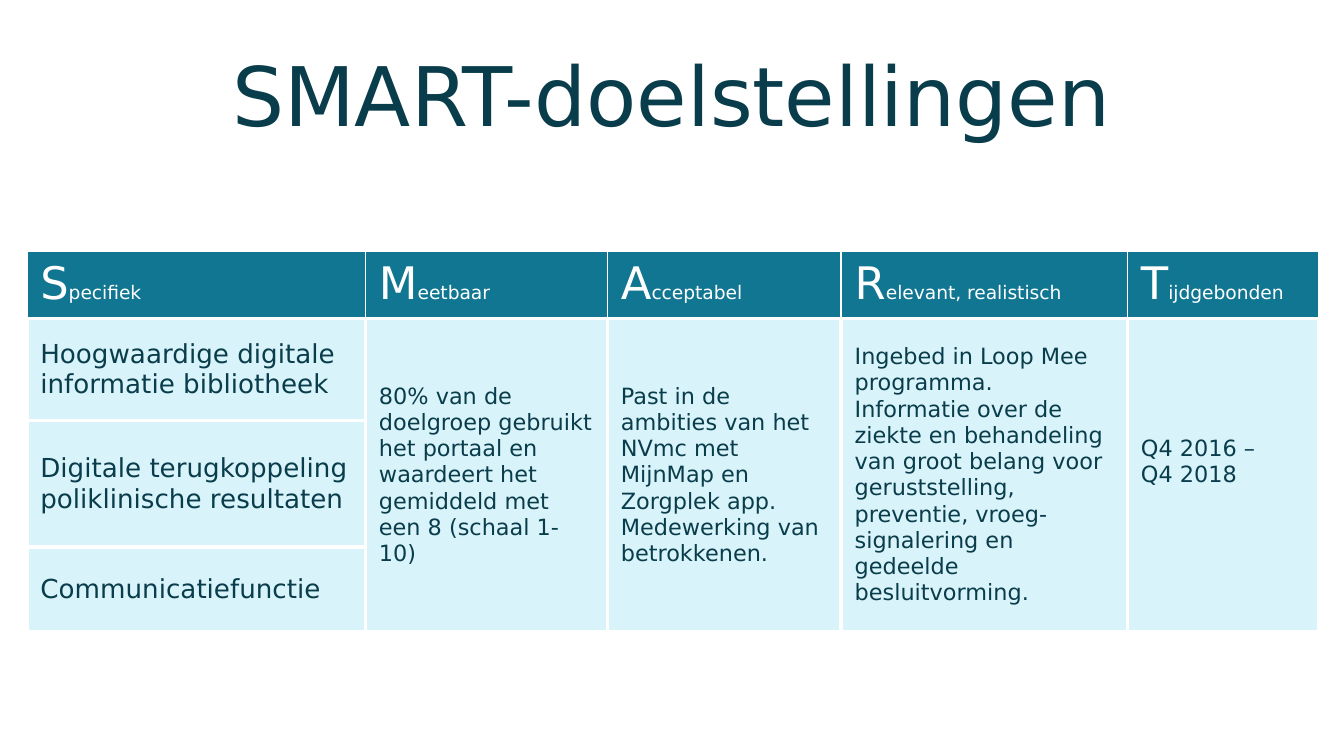
from lxml.etree import SubElement
from pptx import Presentation
from pptx.dml.color import RGBColor
from pptx.enum.text import MSO_ANCHOR as Anchor, PP_ALIGN as Align
from pptx.oxml.ns import qn
from pptx.util import Inches, Pt

# Content
TITLE = "SMART-doelstellingen"
HEADINGS = ["Specifiek", "Meetbaar", "Acceptabel", "Relevant, realistisch", "Tijdgebonden"]
GOALS = [
    "Hoogwaardige digitale informatie bibliotheek",
    "Digitale terugkoppeling poliklinische resultaten",
    "Communicatiefunctie",
]
# One list of paragraphs for each column that runs alongside all goals
SHARED = [
    ["80% van de doelgroep gebruikt het portaal en waardeert het gemiddeld met een 8 (schaal 1-10)"],
    ["Past in de ambities van het NVmc met MijnMap en Zorgplek app.",
     "Medewerking van betrokkenen."],
    ["Ingebed in Loop Mee programma.",
     "Informatie over de ziekte en behandeling van groot belang voor geruststelling, "
     "preventie, vroeg-signalering en gedeelde besluitvorming."],
    ["Q4 2016 – \nQ4 2018"],
]

# Format
FONT = "DejaVu Sans"
DARK, TEAL, PALE, WHITE = "093D4B", "117691", "D9F3FA", "FFFFFF"
THIN, THICK = 1, 2.25
COLUMNS = [2.52, 1.8, 1.74, 2.13, 1.42]
ROWS = [0.5, 0.76, 0.94, 0.63]


def rgb(value):
    return RGBColor.from_string(value)


def add_span(para, text, size, color):
    for number, line in enumerate(text.split("\n")):
        if number:
            para.add_line_break()
        span = para.add_run()
        span.text = line
        for name, value in {"name": FONT, "size": Pt(size), "bold": False}.items():
            setattr(span.font, name, value)
        span.font.color.rgb = rgb(color)


def write_cell(cell, paragraphs, size):
    cell.vertical_anchor = Anchor.MIDDLE
    frame = cell.text_frame
    for number, text in enumerate(paragraphs):
        para = frame.add_paragraph() if number else frame.paragraphs[0]
        add_span(para, text, size, DARK)


def style_cell(cell, fill, widths):
    props = cell._tc.get_or_add_tcPr()
    for side, width in widths.items():
        line = SubElement(props, qn(f"a:ln{side}"), w=str(Pt(width)))
        SubElement(SubElement(line, qn("a:solidFill")), qn("a:srgbClr"), val=WHITE)
    cell.fill.solid()
    cell.fill.fore_color.rgb = rgb(fill)


# Widescreen page, 16:9
deck = Presentation()
deck.slide_width, deck.slide_height = Inches(10), Inches(10 * 9 / 16)
page = deck.slides.add_slide(deck.slide_layouts[5])

# Title
title = page.shapes.title
box = {"left": 0.5, "top": 0.23, "width": 9, "height": 0.94}
for name, value in box.items():
    setattr(title, name, Inches(value))
title.text_frame.vertical_anchor = Anchor.MIDDLE
title_para = title.text_frame.paragraphs[0]
title_para.alignment = Align.CENTER
add_span(title_para, TITLE, 44, DARK)

# Table grid
table = page.shapes.add_table(
    len(ROWS), len(COLUMNS), Inches(0.2), Inches(1.87),
    Inches(sum(COLUMNS)), Inches(sum(ROWS))).table
for column, width in zip(table.columns, COLUMNS):
    column.width = Inches(width)
for row, height in zip(table.rows, ROWS):
    row.height = Inches(height)
for number, row in enumerate(table.rows):
    fill, edge = (PALE, THICK) if number else (TEAL, THIN)
    for cell in row.cells:
        style_cell(cell, fill, {"L": edge, "R": edge, "T": edge, "B": THICK})

# Headings with a large first letter
for column, heading in enumerate(HEADINGS):
    para = table.cell(0, column).text_frame.paragraphs[0]
    add_span(para, heading[0], 24, WHITE)
    add_span(para, heading[1:], 10, WHITE)

# Goals, and the columns they share
for row, goal in enumerate(GOALS, 1):
    write_cell(table.cell(row, 0), [goal], 14)
for column, paragraphs in enumerate(SHARED, 1):
    cell = table.cell(1, column)
    cell.merge(table.cell(len(GOALS), column))
    write_cell(cell, paragraphs, 12)

# The period sits a little above the middle
table.cell(1, len(SHARED)).margin_bottom = Inches(0.25)

deck.save("out.pptx")
